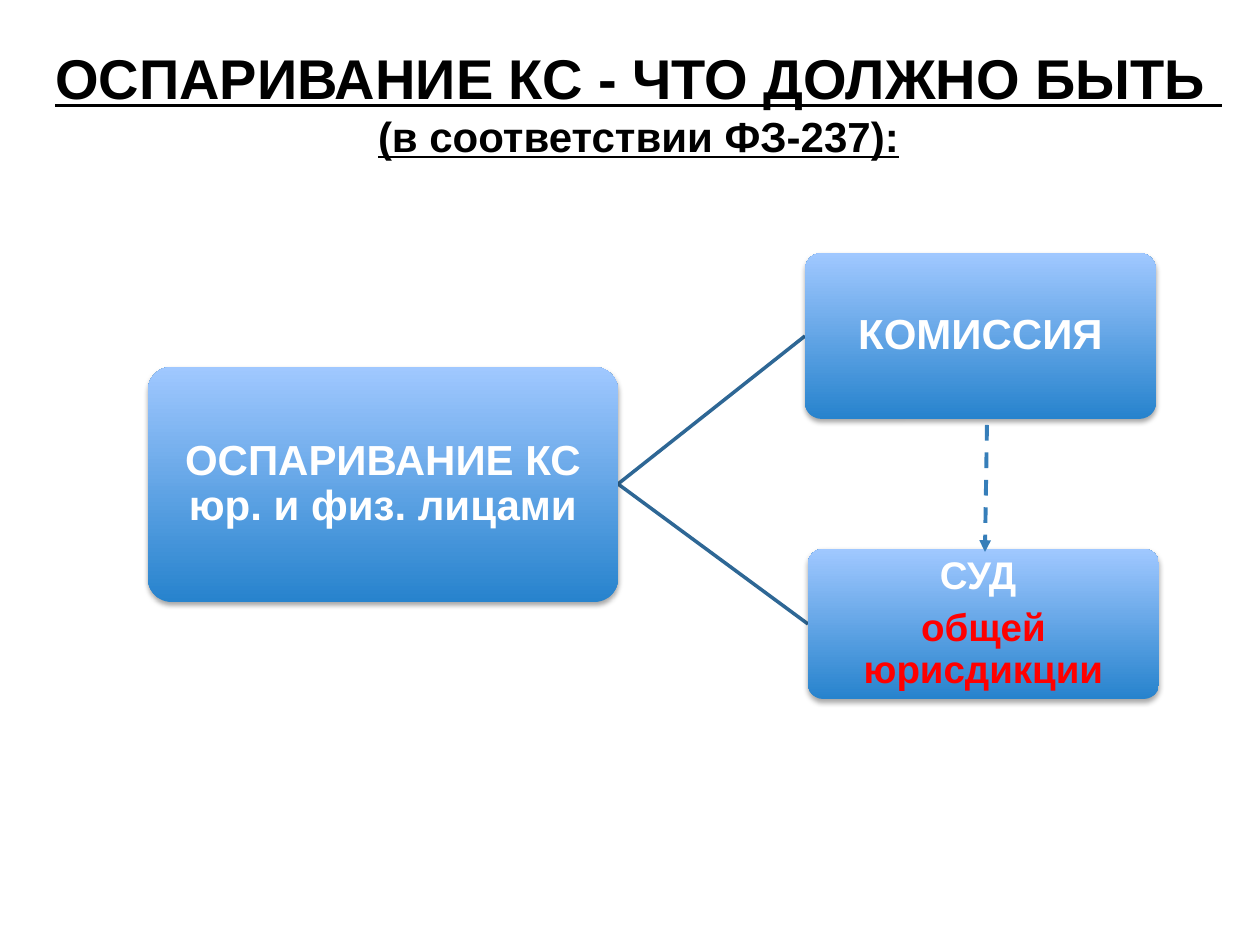
from dataclasses import dataclass

from lxml.etree import SubElement
from pptx import Presentation
from pptx.dml.color import RGBColor
from pptx.enum.dml import MSO_LINE
from pptx.enum.shapes import MSO_CONNECTOR, MSO_SHAPE
from pptx.enum.text import MSO_ANCHOR, MSO_AUTO_SIZE, PP_ALIGN
from pptx.oxml import parse_xml
from pptx.oxml.ns import nsdecls, qn
from pptx.shapes.autoshape import Shape
from pptx.shapes.connector import Connector
from pptx.slide import Slide
from pptx.text.text import TextFrame
from pptx.util import Emu, Pt


@dataclass(frozen=True)
class Theme:
    font: str = "Arial"
    ink: str = "000000"
    white: str = "FFFFFF"
    red: str = "FF0000"
    deep: str = "2783CD"
    pale: str = "A0C8FF"
    link: str = "2E6795"
    arrow: str = "367EB9"
    head: int = 32
    body: int = 24
    small: int = 22


@dataclass(frozen=True)
class Line:
    text: str
    size: int
    color: str


@dataclass(frozen=True)
class Box:
    left: int
    top: int
    width: int
    height: int
    lines: tuple[Line, ...]

    @property
    def middle(self) -> int:
        return self.top + self.height // 2

    @property
    def right(self) -> int:
        return self.left + self.width


THEME = Theme()
SCALE = 914400 / 126
TITLE = (
    Line("ОСПАРИВАНИЕ КС - ЧТО ДОЛЖНО БЫТЬ ", THEME.head, THEME.ink),
    Line("(в соответствии ФЗ-237):", THEME.body, THEME.ink),
)
CLAIM = Box(148, 367, 470, 235, (
    Line("ОСПАРИВАНИЕ КС юр. и физ. лицами", THEME.body, THEME.white),
))
PANEL = Box(805, 253, 351, 166, (
    Line("КОМИССИЯ", THEME.body, THEME.white),
))
COURT = Box(808, 549, 351, 150, (
    Line("СУД ", THEME.small, THEME.white),
    Line("общей юрисдикции", THEME.small, THEME.red),
))


def px(count: int) -> Emu:
    return Emu(round(count * SCALE))


def rgb(code: str) -> RGBColor:
    return RGBColor.from_string(code)


def write(frame: TextFrame, lines: tuple[Line, ...], under: bool = False) -> None:
    frame.word_wrap = True
    frame.text = "\n".join(line.text for line in lines)
    for para, line in zip(frame.paragraphs, lines):
        para.alignment = PP_ALIGN.CENTER
        for run in para.runs:
            font = run.font
            font.name = THEME.font
            font.size = Pt(line.size)
            font.bold = True
            font.underline = under
            font.color.rgb = rgb(line.color)


def shade(shape: Shape) -> None:
    shape.shadow.inherit = False
    glow = shape._element.spPr.find(qn("a:effectLst"))
    glow.append(parse_xml(
        f'<a:outerShdw {nsdecls("a")} blurRad="39370" dist="22860" dir="5400000" '
        'rotWithShape="0"><a:srgbClr val="000000"><a:alpha val="35000"/>'
        '</a:srgbClr></a:outerShdw>'
    ))


def draw_box(slide: Slide, box: Box) -> None:
    shape = slide.shapes.add_shape(
        MSO_SHAPE.ROUNDED_RECTANGLE,
        px(box.left), px(box.top), px(box.width), px(box.height),
    )
    shape.adjustments[0] = 0.1
    shape.line.fill.background()
    shape.fill.gradient()
    shape.fill.gradient_angle = 90
    for stop, place, code in zip(
        shape.fill.gradient_stops, (0, 1), (THEME.deep, THEME.pale)
    ):
        stop.position = place
        stop.color.rgb = rgb(code)
    shade(shape)
    frame = shape.text_frame
    write(frame, box.lines)
    frame.vertical_anchor = MSO_ANCHOR.MIDDLE
    frame.margin_left = frame.margin_right = px(9)
    frame.margin_top = frame.margin_bottom = px(8)
    for para in frame.paragraphs:
        para.line_spacing = 0.9
        para.space_after = Pt(6)


def draw_line(
    slide: Slide, start: tuple[int, int], end: tuple[int, int],
    color: str, width: float,
) -> Connector:
    line = slide.shapes.add_connector(
        MSO_CONNECTOR.STRAIGHT, *map(px, start + end)
    )
    line.line.color.rgb = rgb(color)
    line.line.width = Pt(width)
    SubElement(line._element.spPr, qn("a:effectLst"))
    return line


def draw_title(slide: Slide) -> None:
    title = slide.shapes.title
    title.left, title.top = px(16), px(37)
    title.width, title.height = px(1245), px(131)
    frame = title.text_frame
    write(frame, TITLE, under=True)
    frame.vertical_anchor = MSO_ANCHOR.TOP
    frame.auto_size = MSO_AUTO_SIZE.SHAPE_TO_FIT_TEXT


def main() -> None:
    deck = Presentation()
    deck.slide_width, deck.slide_height = px(1260), px(945)
    slide = deck.slides.add_slide(deck.slide_layouts[5])
    draw_title(slide)
    for goal in (PANEL, COURT):
        draw_line(
            slide, (CLAIM.right, CLAIM.middle), (goal.left, goal.middle),
            THEME.link, 2,
        )
    for box in (CLAIM, PANEL, COURT):
        draw_box(slide, box)
    arrow = draw_line(slide, (987, 425), (985, 552), THEME.arrow, 2.25)
    arrow.line.dash_style = MSO_LINE.DASH
    SubElement(arrow.line._get_or_add_ln(), qn("a:tailEnd"), type="triangle")
    deck.save("out.pptx")


if __name__ == "__main__":
    main()
